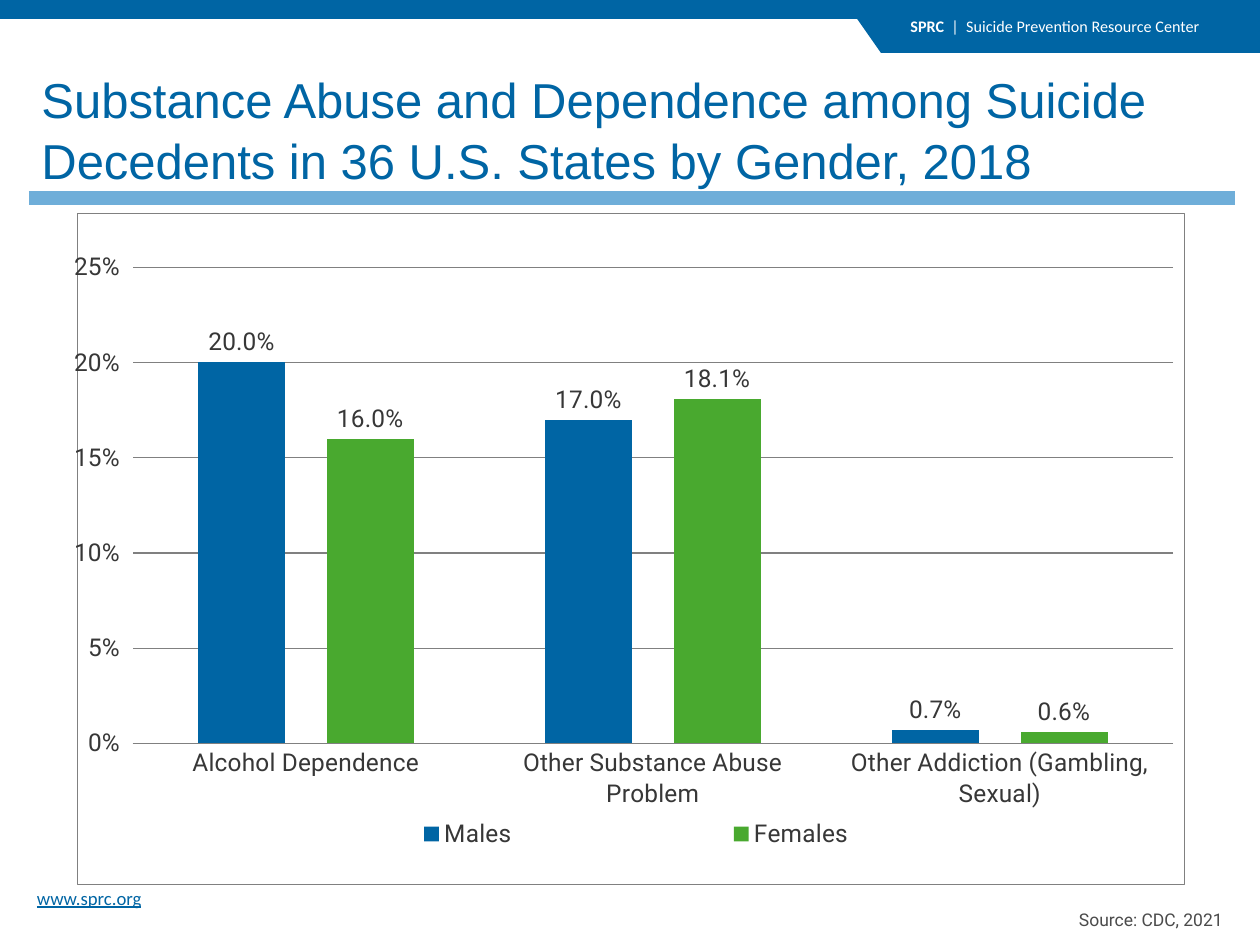
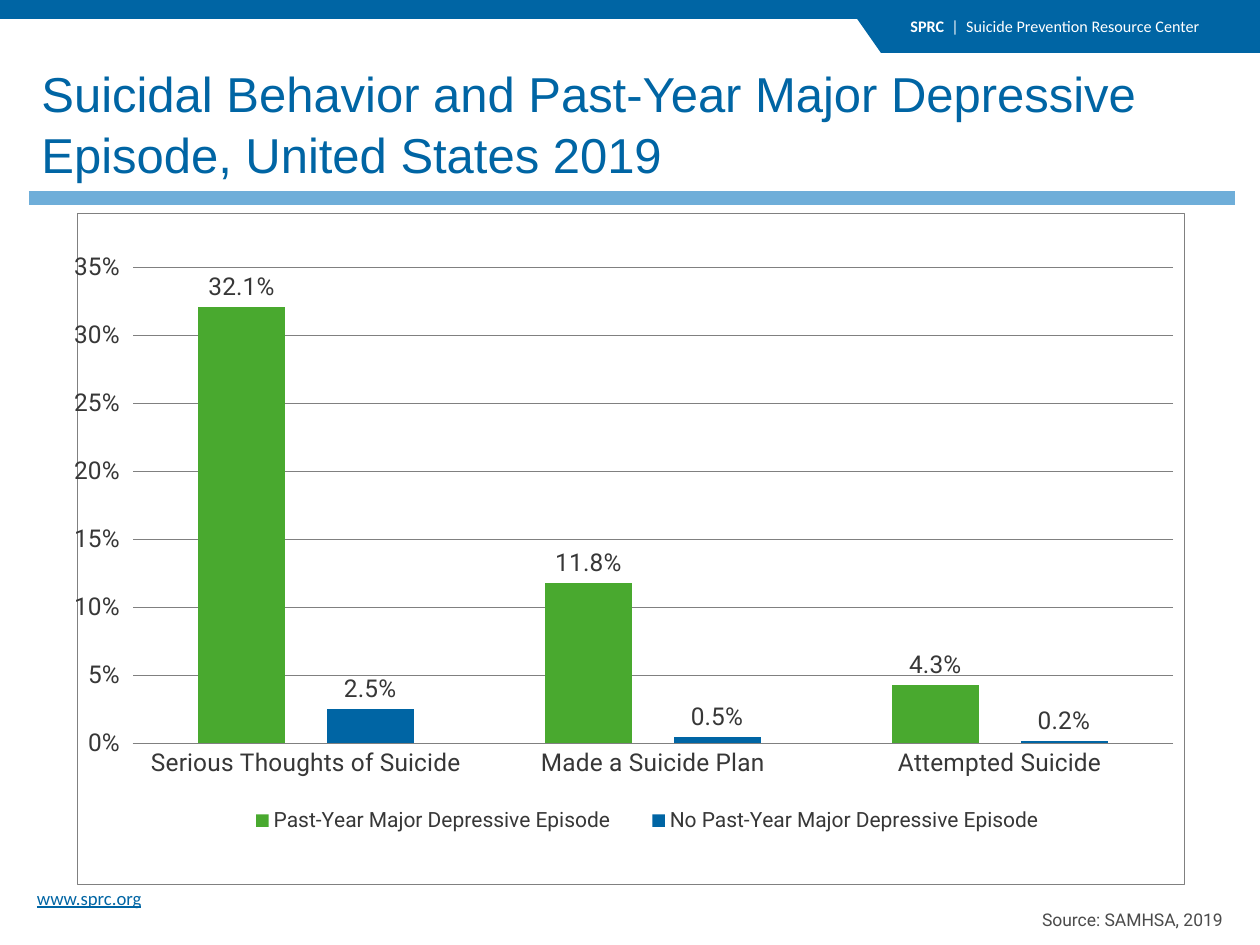
import lxml.etree
import pptx
import pptx.chart.data
import pptx.dml.color
import pptx.enum.chart
import pptx.enum.shapes
import pptx.enum.text
import pptx.oxml
import pptx.oxml.ns
import pptx.util

RGBColor = pptx.dml.color.RGBColor
BLUE = RGBColor(0x00, 0x65, 0xA4)
SKY = RGBColor(0x6F, 0xAE, 0xD9)
GREEN = RGBColor(0x49, 0xA9, 0x2F)
WHITE = RGBColor(0xFF, 0xFF, 0xFF)
GREY = RGBColor(0x80, 0x80, 0x80)
CHARCOAL = RGBColor(0x37, 0x37, 0x37)
SOURCE_GREY = RGBColor(0x4B, 0x4B, 0x4B)

SCALE = 914400 / 126
PLOT_AREA = (0.05, 0.08, 0.94, 0.71)
qn = pptx.oxml.ns.qn


def px(*lengths):
    return [pptx.util.Emu(round(length * SCALE)) for length in lengths]


def add_span(para, text, font, size, color, bold=False, underline=False):
    span = para.add_run()
    span.text = text
    span.font.name = font
    span.font.size = pptx.util.Pt(size)
    span.font.color.rgb = color
    span.font.bold = bold
    span.font.underline = underline


def add_text_box(page, box):
    frame = page.shapes.add_textbox(*px(*box)).text_frame
    frame.word_wrap = True
    return frame


def paint(shape):
    shape.shadow.inherit = False
    shape.fill.solid()
    shape.fill.fore_color.rgb = BLUE
    shape.line.fill.background()


def add_header(page, box):
    left, top, width, height = box
    right, bottom = left + width, top + height
    rectangle = pptx.enum.shapes.MSO_SHAPE.RECTANGLE
    paint(page.shapes.add_shape(rectangle, *px(left, top, width, 19)))
    tab = page.shapes.build_freeform(right - 407, top + 13, scale=SCALE)
    tab.add_line_segments(
        [(right, top + 13), (right, bottom), (right - 379, bottom)], close=True)
    paint(tab.convert_to_shape())
    para = add_text_box(page, (right - 362, top + 10, 372, 52)).paragraphs[0]
    add_span(para, "SPRC", "Calibri", 9.2, WHITE, bold=True)
    add_span(para, "  |  Suicide Prevention Resource Center", "Calibri", 9.2, WHITE)


def add_title(page, box, title):
    para = add_text_box(page, box).paragraphs[0]
    para.line_spacing = 1.05
    add_span(para, title, "Arial", 28, BLUE)


def add_rule(page, left, right, height):
    rule = page.shapes.add_connector(
        pptx.enum.shapes.MSO_CONNECTOR.STRAIGHT, *px(left, height, right, height))
    rule.line.color.rgb = SKY
    rule.line.width = pptx.util.Pt(7.75)
    lxml.etree.SubElement(rule.element.spPr, qn("a:effectLst"))


def add_footer(page, box, source):
    left, top, width, height = box
    link = add_text_box(page, (left, top, 616, 40))
    link.vertical_anchor = pptx.enum.text.MSO_ANCHOR.MIDDLE
    link.margin_left, link.margin_right = px(16, 16)
    link.margin_top, link.margin_bottom = px(9, 9)
    add_span(link.paragraphs[0], "www.sprc.org", "Calibri", 10.7, BLUE, underline=True)
    para = add_text_box(page, (left + width - 416, top + height - 34, 416, 34)).paragraphs[0]
    para.alignment = pptx.enum.text.PP_ALIGN.RIGHT
    add_span(para, source, "Roboto", 10, SOURCE_GREY)


def set_layout(parent, index, area, inner=False):
    for old in parent.findall(qn("c:layout")):
        parent.remove(old)
    layout = lxml.etree.Element(qn("c:layout"))
    manual = lxml.etree.SubElement(layout, qn("c:manualLayout"))
    settings = [("layoutTarget", "inner")] if inner else []
    settings += [("xMode", "edge"), ("yMode", "edge")]
    settings += zip("xywh", map(str, area))
    for tag, value in settings:
        lxml.etree.SubElement(manual, qn("c:" + tag)).set("val", value)
    parent.insert(index, layout)


def chart_frame(content):
    return pptx.oxml.parse_xml(
        f'<c:spPr {pptx.oxml.ns.nsdecls("c", "a")}>{content}</c:spPr>')


def style_font(font, size=14):
    font.name = "Roboto"
    font.size = pptx.util.Pt(size)
    font.color.rgb = CHARCOAL


def style_axes(chart, maximum):
    category, value = chart.category_axis, chart.value_axis
    category.major_tick_mark = pptx.enum.chart.XL_TICK_MARK.NONE
    category.format.line.color.rgb = GREY
    value.minimum_scale, value.maximum_scale = 0, maximum
    value.major_unit = 0.05
    value.tick_labels.number_format = "0%"
    value.tick_labels.number_format_is_linked = False
    value.format.line.fill.background()
    grid = value.major_gridlines.format.line
    grid.color.rgb = GREY
    grid.width = pptx.util.Pt(0.75)
    for axis in (category, value):
        style_font(axis.tick_labels.font)


def add_column_chart(page, box, categories, series, maximum, legend_size, legend_area):
    data = pptx.chart.data.CategoryChartData(number_format="0.0%")
    data.categories = categories
    for name, values, color in series:
        data.add_series(name, values)
    chart = page.shapes.add_chart(
        pptx.enum.chart.XL_CHART_TYPE.COLUMN_CLUSTERED, *px(*box), data).chart
    chart.has_title = False
    style_font(chart.font)
    style_axes(chart, maximum)

    plot = chart.plots[0]
    plot.vary_by_categories = False
    plot.gap_width, plot.overlap = 151, -48
    for bars, (name, values, color) in zip(plot.series, series):
        bars.format.fill.solid()
        bars.format.fill.fore_color.rgb = color
        labels = bars.data_labels
        labels.show_value = True
        labels.number_format = "0.0%"
        labels.number_format_is_linked = False
        labels.position = pptx.enum.chart.XL_LABEL_POSITION.OUTSIDE_END
        style_font(labels.font)

    chart.has_legend = True
    chart.legend.position = pptx.enum.chart.XL_LEGEND_POSITION.BOTTOM
    chart.legend.include_in_layout = False
    style_font(chart.legend.font, legend_size)

    body = chart.element.find(qn("c:chart"))
    plot_area = body.find(qn("c:plotArea"))
    set_layout(plot_area, 0, PLOT_AREA, inner=True)
    set_layout(body.find(qn("c:legend")), 1, legend_area)
    white = f'<a:solidFill><a:srgbClr val="{WHITE}"/></a:solidFill>'
    grey = f'<a:solidFill><a:srgbClr val="{GREY}"/></a:solidFill>'
    plot_area.append(chart_frame(white))
    body.addnext(chart_frame(f'<a:noFill/><a:ln w="9525">{grey}</a:ln>'))


def add_chart_page(deck, title, title_top, source, **chart):
    page = deck.slides.add_slide(deck.slide_layouts[6])
    add_header(page, (0, 0, 1260, 53))
    add_footer(page, (21, 878, 1214, 59), source)
    add_column_chart(page, (74, 213, 1111, 672), **chart)
    add_title(page, (29, title_top, 1206, 125), title)
    add_rule(page, 29, 1235, 198)


def main():
    deck = pptx.Presentation()
    deck.slide_width, deck.slide_height = px(1260, 945)
    add_chart_page(
        deck,
        "Substance Abuse and Dependence among Suicide Decedents in 36 U.S. States by Gender, 2018",
        60,
        "Source: CDC, 2021",
        categories=["Alcohol Dependence", "Other Substance Abuse Problem",
                    "Other Addiction (Gambling, Sexual)"],
        series=[("Males", (0.2, 0.17, 0.007), BLUE),
                ("Females", (0.16, 0.181, 0.006), GREEN)],
        maximum=0.25,
        legend_size=14,
        legend_area=(0.12, 0.89, 0.77, 0.07),
    )
    add_chart_page(
        deck,
        "Suicidal Behavior and Past-Year Major Depressive Episode, United States 2019",
        54,
        "Source: SAMHSA, 2019",
        categories=["Serious Thoughts of Suicide", "Made a Suicide Plan",
                    "Attempted Suicide"],
        series=[("Past-Year Major Depressive Episode", (0.321, 0.118, 0.043), GREEN),
                ("No Past-Year Major Depressive Episode", (0.025, 0.005, 0.002), BLUE)],
        maximum=0.35,
        legend_size=12,
        legend_area=(0.13, 0.87, 0.77, 0.07),
    )
    deck.save("out.pptx")


if __name__ == "__main__":
    main()
